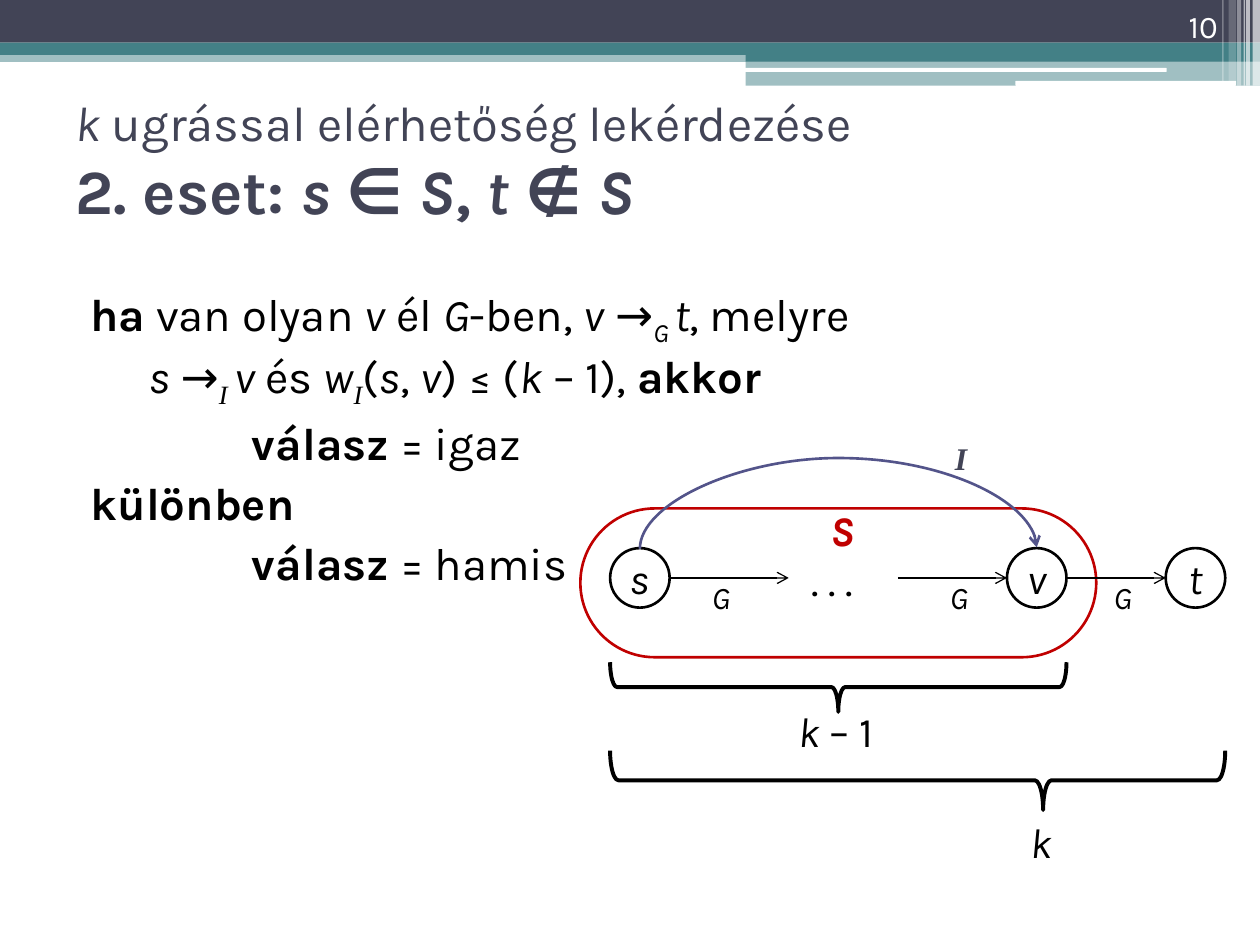
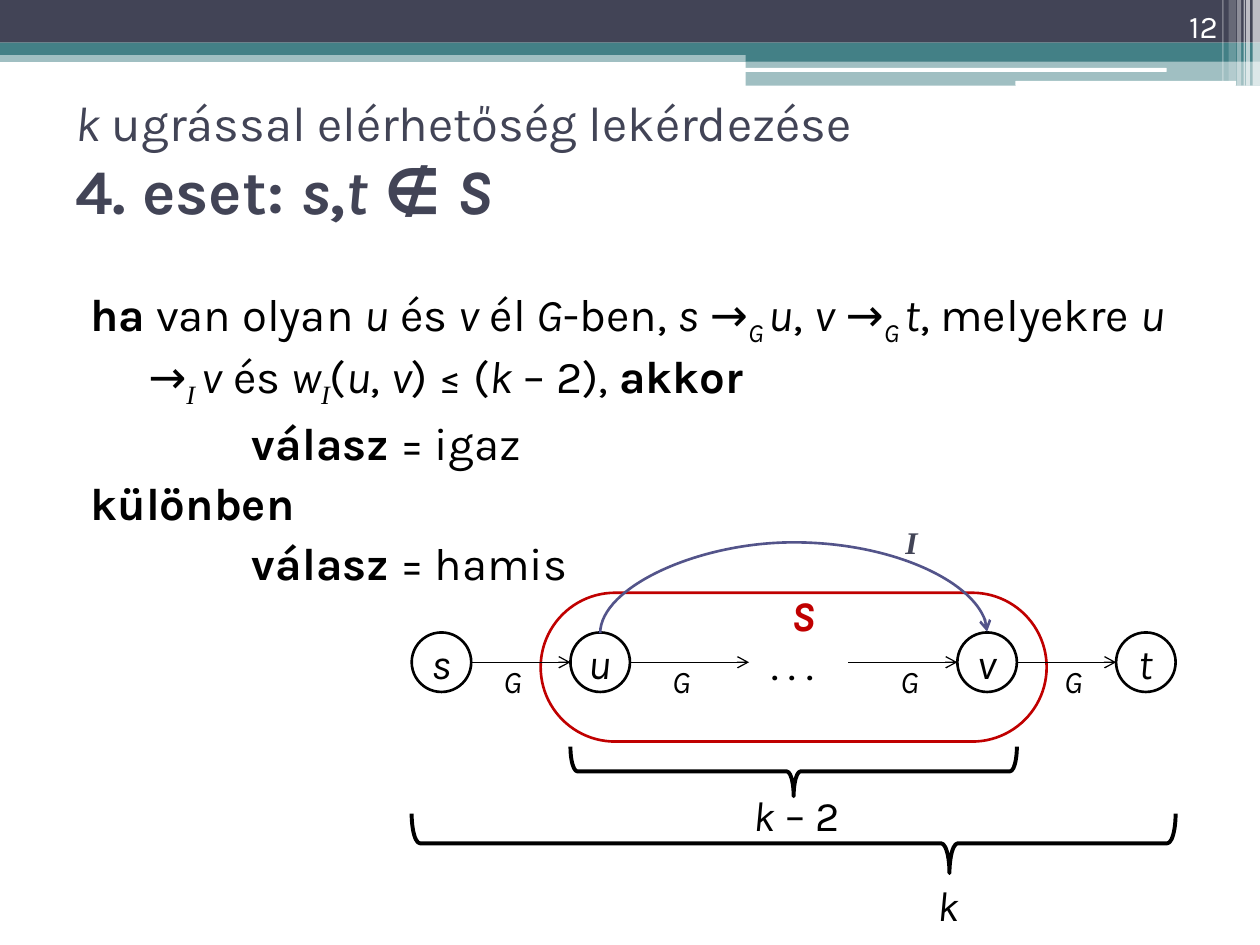
import itertools

import pptx
import pptx.dml.color
import pptx.enum.shapes
import pptx.enum.text
import pptx.oxml.ns
import pptx.oxml.xmlchemy
import pptx.util

Cm = pptx.util.Cm
Pt = pptx.util.Pt
RGBColor = pptx.dml.color.RGBColor
Shape = pptx.enum.shapes.MSO_SHAPE
Connector = pptx.enum.shapes.MSO_CONNECTOR
Anchor = pptx.enum.text.MSO_ANCHOR
Align = pptx.enum.text.PP_ALIGN
new_element = pptx.oxml.xmlchemy.OxmlElement
qn = pptx.oxml.ns.qn

SLATE = RGBColor(0x42, 0x44, 0x56)
TEAL = RGBColor(0x43, 0x80, 0x86)
INDIGO = RGBColor(0x53, 0x54, 0x8A)
RED = RGBColor(0xC0, 0x00, 0x00)
BLACK = RGBColor(0x00, 0x00, 0x00)
WHITE = RGBColor(0xFF, 0xFF, 0xFF)
FONT = "Karla"
SERIF = "Times New Roman"

BOLD, ITALIC, SUB, SERIF_SUB, BREAK = "*_~^\n"
MARKS = {BOLD, ITALIC, SUB, SERIF_SUB, BREAK}

NODE = 1.2
EDGE = 2.0
PILL_GAP = 0.6
ARC_RISE = 1.83
ARC_DEPTH = 0.03

BANDS = [
    (Shape.RECTANGLE, 0, 1.02, 25.4, 0.23, TEAL, 50),
    (Shape.RECTANGLE, 0, 0, 25.4, 0.86, SLATE, 100),
    (Shape.RECTANGLE, 0, 0.86, 25.4, 0.25, TEAL, 100),
    (Shape.RECTANGLE, 15.03, 0.99, 10.37, 0.25, TEAL, 100),
    (Shape.RECTANGLE, 15.03, 1.23, 10.37, 0.5, TEAL, 50),
    (Shape.ROUNDED_RECTANGLE, 15.01, 1.37, 8.51, 0.08, WHITE, 100),
    (Shape.ROUNDED_RECTANGLE, 20.47, 1.63, 4.45, 0.1, WHITE, 100),
    (Shape.RECTANGLE, 25.25, 0, 0.15, 1.73, WHITE, 65),
    (Shape.RECTANGLE, 25.12, 0, 0.08, 1.73, WHITE, 65),
    (Shape.RECTANGLE, 25.07, 0, 0.03, 1.73, WHITE, 60),
    (Shape.RECTANGLE, 24.94, 0, 0.08, 1.73, WHITE, 40),
    (Shape.RECTANGLE, 24.77, 0, 0.15, 1.63, WHITE, 20),
    (Shape.RECTANGLE, 24.64, 0, 0.03, 1.63, WHITE, 30),
]

TITLE_TOP = "_k_ ugrással elérhetőség lekérdezése"
HANGING = (1.47, -1.17)
PLAIN = (1.02, -0.71)
NESTED = (3.56, 0)
ANSWERS = [
    ("*válasz* = igaz", NESTED),
    ("*különben*", PLAIN),
    ("*válasz* = hamis", NESTED),
]


def write(para, text, size=24, color=BLACK, font=FONT, bold=False, italic=False):
    """Add text to a paragraph, toggling formats at the marks."""
    active = set()
    for is_mark, chars in itertools.groupby(text, lambda char: char in MARKS):
        chunk = "".join(chars)
        if is_mark:
            active ^= set(chunk) - {BREAK}
            if BREAK in chunk:
                para.add_line_break()
            continue
        span = para.add_run()
        span.text = chunk
        span.font.size = Pt(size)
        span.font.color.rgb = color
        span.font.name = SERIF if SERIF_SUB in active else font
        span.font.bold = bold or BOLD in active
        span.font.italic = italic or bool(active & {ITALIC, SUB, SERIF_SUB})
        if active & {SUB, SERIF_SUB}:
            span.font._element.set("baseline", "-25000")


def add_text(page, box, text="", anchor=Anchor.TOP, align=Align.LEFT, wrap=True, **style):
    """Place a text box and return its frame."""
    frame = page.shapes.add_textbox(*map(Cm, box)).text_frame
    frame.word_wrap = wrap
    frame.vertical_anchor = anchor
    frame.paragraphs[0].alignment = align
    if text:
        write(frame.paragraphs[0], text, **style)
    return frame


def add_form(page, kind, box, fill=None, line=None, width=1.5, opacity=100):
    """Place a preset shape with the given fill and outline."""
    form = page.shapes.add_shape(kind, *map(Cm, box))
    form.shadow.inherit = False
    if fill is None:
        form.fill.background()
    else:
        form.fill.solid()
        form.fill.fore_color.rgb = fill
        if opacity < 100:
            alpha = new_element("a:alpha")
            alpha.set("val", str(opacity * 1000))
            form._element.spPr.find(".//" + qn("a:srgbClr")).append(alpha)
    if line is None:
        form.line.fill.background()
    else:
        form.line.color.rgb = line
        form.line.width = Pt(width)
    return form


def add_arrow(page, kind, start, end, color=BLACK, width=0.75):
    """Draw a connector with an open arrowhead at its end."""
    arrow = page.shapes.add_connector(kind, *map(Cm, start + end))
    arrow.line.color.rgb = color
    arrow.line.width = Pt(width)
    head = new_element("a:tailEnd")
    head.set("type", "arrow")
    properties = arrow._element.spPr
    properties.find(qn("a:ln")).append(head)
    properties.append(new_element("a:effectLst"))
    return arrow


def add_arc(page, left, right, base):
    """Draw the curved arrow that rises above the base line."""
    middle, half = (left + right) / 2, (right - left) / 2
    start = (middle + ARC_DEPTH / 2, base + half)
    end = (middle - ARC_DEPTH / 2, base - half)
    arc = add_arrow(page, Connector.CURVE, start, end, INDIGO, 1.5)
    properties = arc._element.spPr
    properties.find(qn("a:xfrm")).set("rot", "5400000")
    guide = new_element("a:gd")
    guide.set("name", "adj1")
    guide.set("fmla", f"val {round(ARC_RISE / ARC_DEPTH * 100000)}")
    properties.find(".//" + qn("a:avLst")).append(guide)


def add_node(page, left, top, name):
    """Draw a graph node with its name."""
    node = add_form(page, Shape.OVAL, (left, top, NODE, NODE), WHITE, BLACK)
    frame = node.text_frame
    frame.margin_left = frame.margin_right = frame.margin_top = frame.margin_bottom = 0
    frame.word_wrap = False
    frame.vertical_anchor = Anchor.MIDDLE
    frame.paragraphs[0].alignment = Align.CENTER
    write(frame.paragraphs[0], name, italic=True)


def add_edge(page, left, right, top, label_left):
    """Draw an edge between nodes of the given top, labelled G."""
    middle = top + NODE / 2
    add_arrow(page, Connector.STRAIGHT, (left, middle), (right, middle))
    add_text(page, (label_left, top + 0.47, 0.8, 1.02), "G", wrap=False, size=18, italic=True)


def add_brace(page, box, tip, label, offset):
    """Draw a brace that opens upward, with a label under its tip."""
    left, top, span, depth = box
    turned = (left + (span - depth) / 2, top + (depth - span) / 2, depth, span)
    brace = add_form(page, Shape.LEFT_BRACE, turned, line=BLACK, width=2.25)
    brace.rotation = 270
    brace.adjustments[0] = 0.139
    brace.adjustments[1] = tip
    label_left, label_top = left + span * tip + offset[0], top + depth + offset[1]
    add_text(page, (label_left, label_top, 2.8, 1.27), label)


def draw_banner(page, number):
    """Draw the top bands, the stripes and the slide number."""
    for kind, *box, color, opacity in BANDS:
        add_form(page, kind, box, color, opacity=opacity)
    add_text(page, (22.7, 0, 2.1, 1.02), number, Anchor.BOTTOM, Align.RIGHT, size=18, color=WHITE)


def draw_title(page, box, case):
    """Write the shared title line and the case below it."""
    frame = add_text(page, box, TITLE_TOP + BREAK, Anchor.MIDDLE, size=28, color=SLATE)
    write(frame.paragraphs[0], case, size=36, color=SLATE, bold=True)


def draw_rule(page, box, condition):
    """Write the condition and its two answers."""
    frame = add_text(page, box)
    for index, (text, (margin, indent)) in enumerate([(condition, HANGING)] + ANSWERS):
        para = frame.add_paragraph() if index else frame.paragraphs[0]
        para.space_before = Pt(3)
        layout = para._p.get_or_add_pPr()
        layout.set("marL", str(int(Cm(margin))))
        layout.set("indent", str(int(Cm(indent))))
        write(para, text, size=26)


def draw_graph(page, box, first, before, inner_label, outer_drop):
    """Draw the path through set S; the box runs from its first to its last node."""
    left, top, width = box
    last = left + width - NODE
    pill_box = (left - PILL_GAP, top - 0.8, width + 2 * PILL_GAP, 3)
    pill = add_form(page, Shape.ROUNDED_RECTANGLE, pill_box, WHITE, RED)
    pill.adjustments[0] = 0.5
    start, end = left, last + NODE + EDGE
    if before:
        start = left - EDGE - NODE
        add_node(page, start, top, before)
        add_edge(page, start + NODE, left, top, start + NODE + 0.4)
    add_node(page, left, top, first)
    add_edge(page, left + NODE, left + NODE + 2.4, top, left + 1.8)
    add_text(page, (left + 3.8, top, 2.8, 1.27), ". . .")
    add_edge(page, last - 2.2, last, top, last - 1.4)
    add_node(page, last, top, "v")
    add_edge(page, last + NODE, end, top, last + NODE + 0.7)
    add_node(page, end, top, "t")
    add_text(page, (left + 4.2, top - 1, 1.4, 1.27), "S", color=RED, bold=True, italic=True)
    add_arc(page, left + NODE / 2, last + NODE / 2, top)
    add_text(page, (last - 1.3, top - 2.33, 0.8, 1.02), "I", wrap=False,
             size=18, color=SLATE, font=SERIF, bold=True, italic=True)
    add_brace(page, (left, top + 2.3, width, 1), 0.5, inner_label, (-1.05, -0.25))
    outer_box = (start, top + outer_drop, end + NODE - start, 1.2)
    add_brace(page, outer_box, 0.704, "_k_", (-0.5, 0))


def build_case(deck, number, case, condition, graph):
    """Build one slide for a case of the query."""
    page = deck.slides.add_slide(deck.slide_layouts[6])
    draw_banner(page, number)
    draw_title(page, (1.27, 1.73, 22.86, 2.97), case)
    draw_rule(page, (1.27, 5.64, 22.86, 8.48), condition)
    draw_graph(page, **graph)


def main():
    """Build and save the deck."""
    deck = pptx.Presentation()
    deck.slide_width, deck.slide_height = Cm(25.4), Cm(19.05)
    build_case(
        deck, "10", "2. eset: _s_ ∈ _S_, _t_ ∉ _S_",
        "*ha* van olyan _v_ él _G_-ben, _v_ →~G ~_t_, melyre\n"
        "_s_ →^I ^_v_ és _w_^I^(_s_, _v_) ≤ (_k_ – 1), *akkor*",
        dict(box=(12.3, 11.05, 9.2), first="s", before="",
             inner_label="_k_ – 1", outer_drop=4.08),
    )
    build_case(
        deck, "12", "4. eset: _s_,_t_ ∉ _S_",
        "*ha* van olyan _u_ és _v_ él _G_-ben, _s_ →~G ~_u_, _v_ →~G ~_t_, melyekre "
        "_u_ →^I ^_v_ és _w_^I^(_u_, _v_) ≤ (_k_ – 2), *akkor*",
        dict(box=(11.5, 12.75, 9), first="u", before="s",
             inner_label="_k_ – 2", outer_drop=3.65),
    )
    deck.save("out.pptx")


if __name__ == "__main__":
    main()
